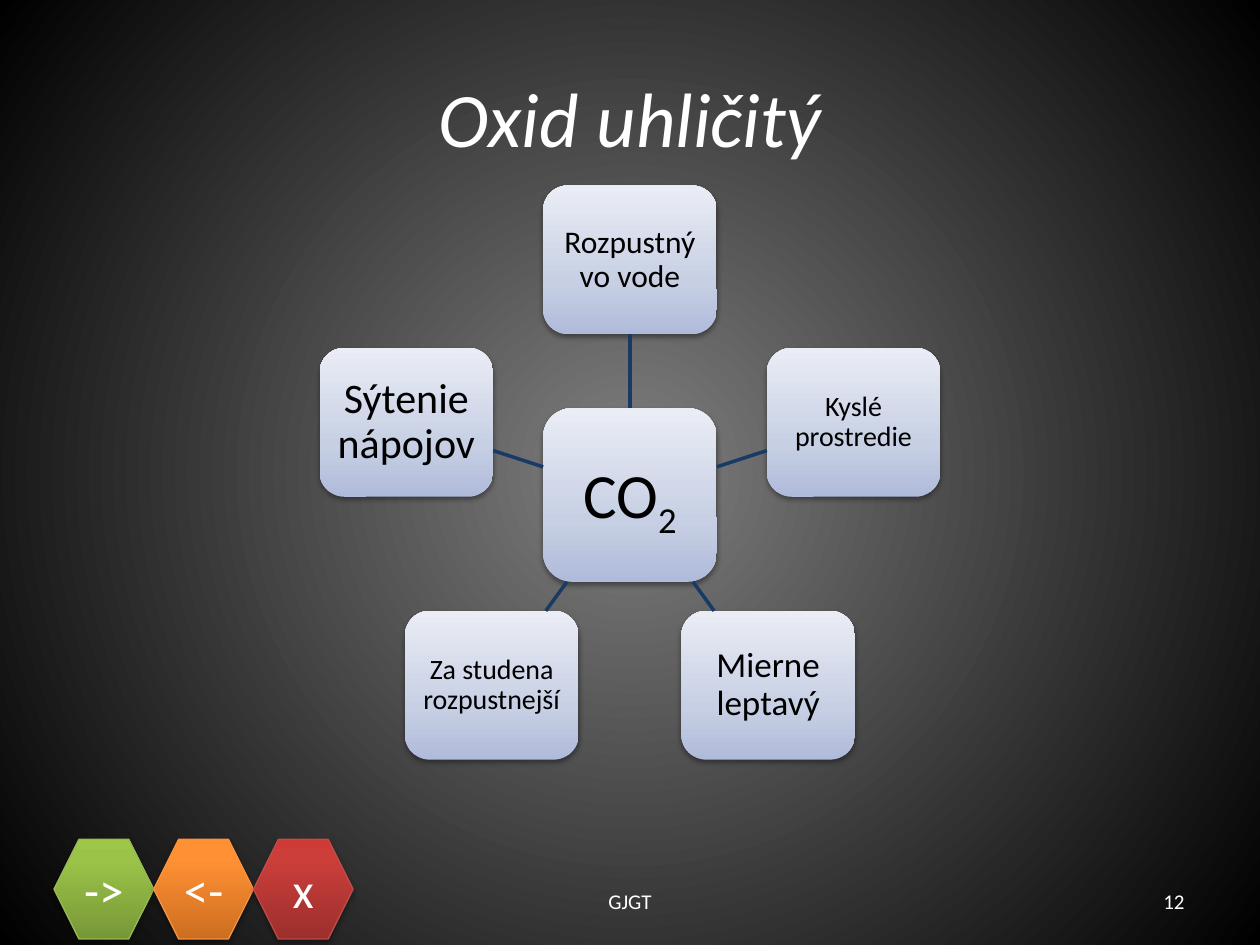
from copy import deepcopy
from math import cos, radians, sin

from lxml.etree import SubElement
from pptx import Presentation
from pptx.dml.color import RGBColor
from pptx.enum.shapes import MSO_CONNECTOR, MSO_SHAPE
from pptx.enum.text import MSO_ANCHOR, PP_ALIGN
from pptx.oxml.ns import qn
from pptx.util import Cm, Pt

WHITE = RGBColor(0xFF, 0xFF, 0xFF)
BLACK = RGBColor(0x00, 0x00, 0x00)
GREY = RGBColor(0x7F, 0x7F, 0x7F)
NAVY = RGBColor(0x19, 0x3A, 0x64)
PALE_BLUES = [(0, RGBColor(0xAF, 0xBB, 0xDA)), (0.35, RGBColor(0xC7, 0xCF, 0xE4)),
              (1, RGBColor(0xEA, 0xED, 0xF5))]
GREENS = [(0, RGBColor(0x77, 0x97, 0x37)), (0.8, RGBColor(0x9B, 0xC3, 0x48)),
          (1, RGBColor(0x9D, 0xC7, 0x46))]
ORANGES = [(0, RGBColor(0xCC, 0x6E, 0x20)), (0.8, RGBColor(0xFF, 0x90, 0x34)),
           (1, RGBColor(0xFF, 0x91, 0x36))]
REDS = [(0, RGBColor(0x9C, 0x2F, 0x2D)), (0.8, RGBColor(0xCB, 0x3E, 0x3A)),
        (1, RGBColor(0xCE, 0x3B, 0x37))]
GREEN_EDGE = RGBColor(0x98, 0xB9, 0x55)
ORANGE_EDGE = RGBColor(0xF6, 0x92, 0x40)
RED_EDGE = RGBColor(0xBF, 0x4C, 0x48)


def write_text(shape, text, size, color=WHITE, align=PP_ALIGN.CENTER, italic=None,
               subscript="", spacing=None, inset=None, wrap=True):
    frame = shape.text_frame
    frame.word_wrap = wrap
    frame.vertical_anchor = MSO_ANCHOR.MIDDLE
    if inset is not None:
        frame.margin_left = frame.margin_right = inset
        frame.margin_top = frame.margin_bottom = inset
    paragraph = frame.paragraphs[0]
    paragraph.alignment = align
    paragraph.line_spacing = spacing
    for part in filter(None, (text, subscript)):
        run = paragraph.add_run()
        run.text = part
        run.font.name = "Calibri"
        run.font.size = Pt(size)
        run.font.italic = italic
        run.font.color.rgb = color
    if subscript:
        run.font._element.set("baseline", "-25000")


def add_glossy_shape(preset, left, top, width, height, shades, shadow_alpha, shadow_distance):
    """Add a borderless shape with a bottom-to-top gradient and a soft shadow below."""
    shape = slide.shapes.add_shape(preset, Cm(left), Cm(top), Cm(width), Cm(height))
    shape.fill.gradient()
    shape.fill.gradient_angle = 90
    stop_list = next(shape.element.iter(qn("a:gsLst")))
    stop_list.append(deepcopy(stop_list[0]))
    for stop, (position, color) in zip(shape.fill.gradient_stops, shades):
        stop.position = position
        stop.color.rgb = color
    shape.line.fill.background()
    shape.shadow.inherit = False
    effects = shape.element.spPr.find(qn("a:effectLst"))
    shadow = SubElement(effects, qn("a:outerShdw"), blurRad="40000",
                        dist=str(shadow_distance), dir="5400000", rotWithShape="0")
    shadow_color = SubElement(shadow, qn("a:srgbClr"), val="000000")
    SubElement(shadow_color, qn("a:alpha"), val=str(shadow_alpha * 1000))
    return shape


prs = Presentation()
prs.slide_width, prs.slide_height = Cm(25.4), Cm(19.05)
slide = prs.slides.add_slide(prs.slide_layouts[5])

# Background: light centre fading to black
backdrop = slide.background.fill
backdrop.gradient()
for stop, position, color in zip(backdrop.gradient_stops, (0, 1), (GREY, BLACK)):
    stop.position = position
    stop.color.rgb = color
backdrop_gradient = next(slide.element.iter(qn("a:gradFill")))
backdrop_gradient.remove(backdrop_gradient.find(qn("a:lin")))
circle = SubElement(backdrop_gradient, qn("a:path"), path="circle")
SubElement(circle, qn("a:fillToRect"), l="50000", t="50000", r="50000", b="50000")

# Navigation buttons
BUTTON = 2.01
buttons = [("->", GREENS, GREEN_EDGE), ("<-", ORANGES, ORANGE_EDGE), ("x", REDS, RED_EDGE)]
for index, (symbol, shades, edge) in enumerate(buttons):
    button = add_glossy_shape(MSO_SHAPE.HEXAGON, 1.09 + index * BUTTON, 16.92,
                              BUTTON, BUTTON, shades, 35, 23000)
    button.line.color.rgb = edge
    button.line.width = Pt(0.75)
    write_text(button, symbol, 28, wrap=False)

# Title
title = slide.shapes.title
title.left, title.top, title.width, title.height = Cm(1.27), Cm(0.76), Cm(22.86), Cm(3.18)
write_text(title, "Oxid uhličitý", 44, italic=True)

# Hub with its properties spread evenly around it, clockwise from the top
CENTER_X, CENTER_Y, RADIUS = 12.7, 9.98, 4.74
HUB, NODE_WIDTH, NODE_HEIGHT = 3.5, 3.5, 3.0
INSET_PER_POINT = 0.007

hub = add_glossy_shape(MSO_SHAPE.ROUNDED_RECTANGLE, CENTER_X - HUB / 2, CENTER_Y - HUB / 2,
                       HUB, HUB, PALE_BLUES, 38, 20000)
write_text(hub, "CO", 36, BLACK, subscript="2", spacing=0.9, inset=Cm(36 * INSET_PER_POINT))

properties = [("Rozpustný vo vode", 18), ("Kyslé prostredie", 16), ("Mierne leptavý", 20),
              ("Za studena rozpustnejší", 16), ("Sýtenie nápojov", 24)]
for index, (label, size) in enumerate(properties):
    angle = radians(index * 360 / len(properties))
    dx, dy = sin(angle), -cos(angle)
    node = add_glossy_shape(MSO_SHAPE.ROUNDED_RECTANGLE,
                            CENTER_X + RADIUS * dx - NODE_WIDTH / 2,
                            CENTER_Y + RADIUS * dy - NODE_HEIGHT / 2,
                            NODE_WIDTH, NODE_HEIGHT, PALE_BLUES, 38, 20000)
    write_text(node, label, size, BLACK, spacing=0.9, inset=Cm(size * INSET_PER_POINT))

    # The spoke runs between the edges of the two boxes
    start = HUB / 2 / max(abs(dx), abs(dy))
    end = RADIUS - 1 / max(abs(dx) / (NODE_WIDTH / 2), abs(dy) / (NODE_HEIGHT / 2))
    spoke = slide.shapes.add_connector(
        MSO_CONNECTOR.STRAIGHT,
        Cm(CENTER_X + start * dx), Cm(CENTER_Y + start * dy),
        Cm(CENTER_X + end * dx), Cm(CENTER_Y + end * dy))
    if index == 0:
        spoke.begin_connect(hub, 0)
        spoke.end_connect(node, 2)
    spoke.line.color.rgb = NAVY
    spoke.line.width = Pt(2)
    SubElement(spoke.element.spPr, qn("a:effectLst"))

# Footer and slide number
footers = [("GJGT", 8.68, 8.04, PP_ALIGN.CENTER), ("12", 18.2, 5.93, PP_ALIGN.RIGHT)]
for text, left, width, align in footers:
    footer = slide.shapes.add_textbox(Cm(left), Cm(17.66), Cm(width), Cm(1.01))
    write_text(footer, text, 12, align=align)

prs.save("out.pptx")
